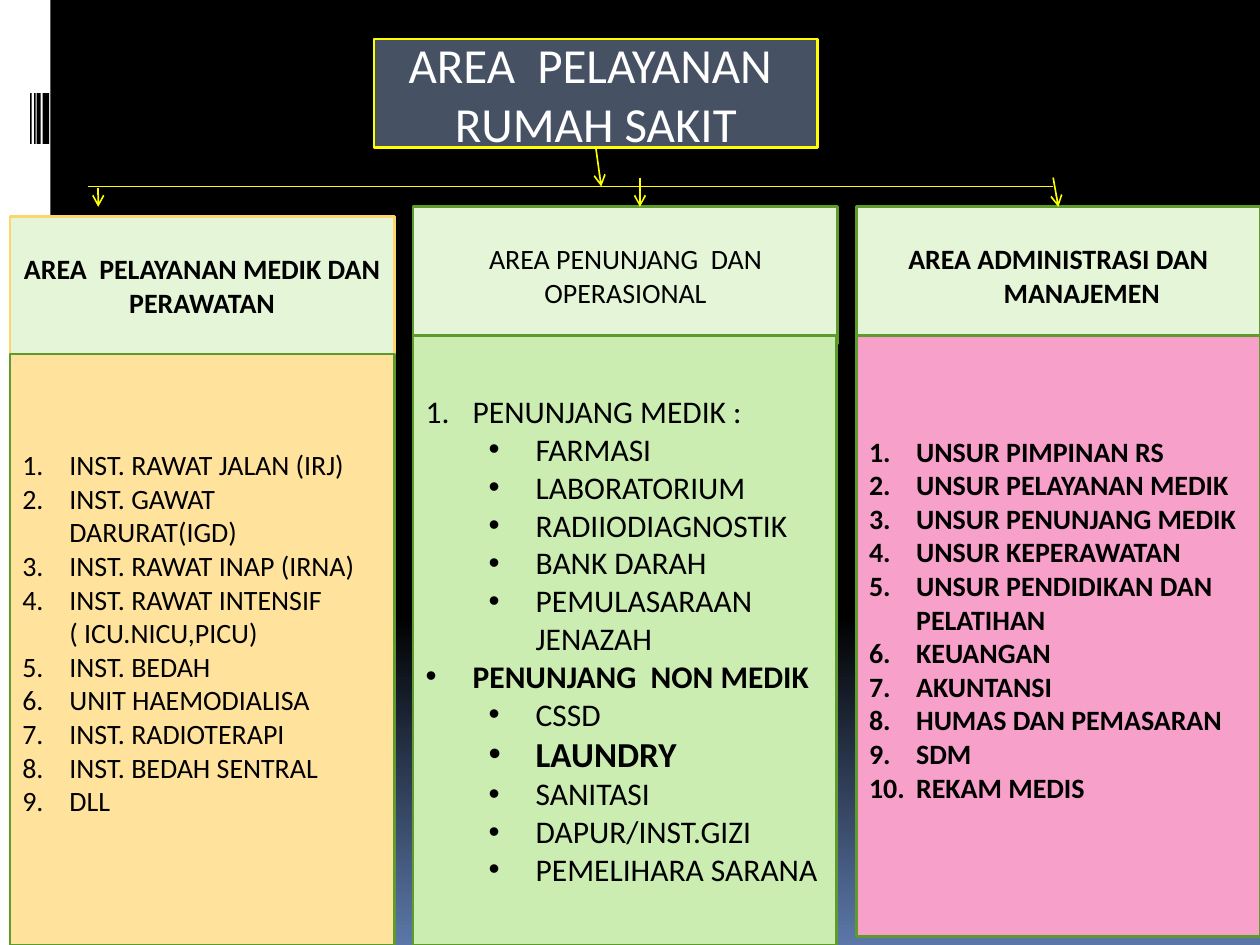
"""Build the chart of hospital service areas."""
import pptx
import pptx.dml.color
import pptx.enum.shapes
import pptx.enum.text
import pptx.oxml.ns
import pptx.util
from lxml import etree
from pptx.util import Cm

FONT = "Calibri"
BLACK, WHITE, YELLOW, GREEN = "000000", "FFFFFF", "FFFF00", "5E9B2C"
HEADER_FILL = "E5F6D8"
HEADER_HEIGHT = 2.77
INDENT = 0.95
LEVEL_STEP = 1.27
ALIGN = pptx.enum.text.PP_ALIGN

SIDEBAR = (0, 0, 1.02, 19.05)
BARCODE = [(0.86, 0.13), (0.74, 0.08), (0.69, 0.03), (0.61, 0.03)]
BARCODE_TOP, BARCODE_HEIGHT = 1.88, 1.02
TITLE = ["AREA  PELAYANAN ", "RUMAH SAKIT"]
TITLE_PLACE = (7.54, 0.79, 8.94, 2.18)

MEDICAL_ITEMS = [
    "INST. RAWAT JALAN (IRJ)", "INST. GAWAT DARURAT(IGD)", "INST. RAWAT INAP (IRNA)",
    "INST. RAWAT INTENSIF\n( ICU.NICU,PICU)", "INST. BEDAH", "UNIT HAEMODIALISA",
    "INST. RADIOTERAPI", "INST. BEDAH SENTRAL", "DLL",
]
SUPPORT_GROUPS = [
    ("PENUNJANG MEDIK :", True,
     ["FARMASI", "LABORATORIUM", "RADIIODIAGNOSTIK", "BANK DARAH", "PEMULASARAAN JENAZAH"]),
    ("PENUNJANG  NON MEDIK", False,
     ["CSSD", "LAUNDRY", "SANITASI", "DAPUR/INST.GIZI", "PEMELIHARA SARANA"]),
]
ADMIN_ITEMS = [
    "UNSUR PIMPINAN RS", "UNSUR PELAYANAN MEDIK", "UNSUR PENUNJANG MEDIK",
    "UNSUR KEPERAWATAN", "UNSUR PENDIDIKAN DAN PELATIHAN", "KEUANGAN", "AKUNTANSI",
    "HUMAS DAN PEMASARAN", "SDM", "REKAM MEDIS",
]
COLUMNS = {
    "medical": dict(
        title="AREA  PELAYANAN MEDIK DAN PERAWATAN", bold=True, hanging=False,
        left=0.2, top=4.37, width=7.75, line="FED46C",
        body=(7.14, 7.75, 11.91), fill="FFE39D", bottom_inset=0.81),
    "support": dict(
        title="AREA PENUNJANG  DAN OPERASIONAL", bold=False, hanging=False,
        left=8.33, top=4.17, width=8.56, line=GREEN,
        body=(6.76, 8.53, 12.29), fill="CCEDB1", bottom_inset=0.13),
    "admin": dict(
        title="AREA ADMINISTRASI DAN MANAJEMEN", bold=True, hanging=True,
        left=17.27, top=4.17, width=8.13, line=GREEN,
        body=(6.76, 8.13, 12.12), fill="F7A1CA", bottom_inset=0.81),
}
TITLE_ARROW = (12.01, 2.97, 12.12, 3.76)
BUS = (1.78, 3.76, 21.23, 3.76)
MEDICAL_ARROW = (1.98, 3.78, 1.98, 4.17)
ADMIN_ARROW = (21.23, 3.58, 21.34, 4.17)
SUPPORT_ARROW = (12.9, 3.58, 12.9, 4.17)


def rgb(value):
    return pptx.dml.color.RGBColor.from_string(value)


def add_xml(parent, tag, **attributes):
    return etree.SubElement(parent, pptx.oxml.ns.qn(tag), attributes)


def add_box(page, place, fill, line=None):
    box = page.shapes.add_shape(pptx.enum.shapes.MSO_SHAPE.RECTANGLE, *map(Cm, place))
    box.shadow.inherit = False
    box.fill.solid()
    box.fill.fore_color.rgb = rgb(fill)
    if line:
        box.line.color.rgb = rgb(line)
        box.line.width = pptx.util.Pt(1.5)
    else:
        box.line.fill.background()
    box.text_frame.word_wrap = True
    box.text_frame.vertical_anchor = pptx.enum.text.MSO_ANCHOR.MIDDLE
    return box


def format_paragraph(para, size, bold=False, color=BLACK, align=ALIGN.CENTER):
    para.alignment = align
    for span in para.runs:
        span.font.name = FONT
        span.font.size = pptx.util.Pt(size)
        span.font.bold = bold
        span.font.color.rgb = rgb(color)


def hang(para, level=0):
    para.level = level
    properties = para._p.get_or_add_pPr()
    properties.set("marL", str(Cm(INDENT + level * LEVEL_STEP)))
    properties.set("indent", str(-Cm(INDENT)))
    return properties


def fill_list(box, items):
    frame = box.text_frame
    frame.text = "\n".join("-" for _ in items)
    for para, (text, numbered, level, size, bold) in zip(frame.paragraphs, items):
        para.text = text
        format_paragraph(para, size, bold, align=ALIGN.LEFT)
        properties = hang(para, level)
        if numbered:
            add_xml(properties, "a:buFont", typeface="+mj-lt")
            add_xml(properties, "a:buAutoNum", type="arabicPeriod")
        else:
            add_xml(properties, "a:buFont", typeface="Arial")
            add_xml(properties, "a:buChar", char="•")


def add_line(page, points, arrow=True):
    line = page.shapes.add_connector(
        pptx.enum.shapes.MSO_CONNECTOR.STRAIGHT, *map(Cm, points))
    line.line.color.rgb = rgb(YELLOW)
    line.line.width = pptx.util.Pt(0.94)
    if arrow:
        add_xml(line.line._get_or_add_ln(), "a:tailEnd", type="arrow")
    add_xml(line._element.spPr, "a:effectLst")
    return line


def support_items():
    items = []
    for heading, numbered, children in SUPPORT_GROUPS:
        items.append((heading, numbered, 0, 18, not numbered))
        for child in children:
            strong = child == "LAUNDRY"
            items.append((child, False, 1, 20 if strong else 18, strong))
    return items


def set_background(page):
    fill = page.background.fill
    fill.gradient()
    fill.gradient_angle = 270
    for stop, (position, color) in zip(fill.gradient_stops, [(0.65, BLACK), (1, "5B77A8")]):
        stop.position = position
        stop.color.rgb = rgb(color)


def main():
    deck = pptx.Presentation()
    deck.slide_width, deck.slide_height = Cm(25.4), Cm(19.05)
    page = deck.slides.add_slide(deck.slide_layouts[6])
    set_background(page)

    add_box(page, SIDEBAR, WHITE)
    for left, width in BARCODE:
        add_box(page, (left, BARCODE_TOP, width, BARCODE_HEIGHT), BLACK)

    title = add_box(page, TITLE_PLACE, "465264", YELLOW)
    title.text_frame.text = "\n".join(TITLE)
    for para in title.text_frame.paragraphs:
        format_paragraph(para, 28, color=WHITE)

    lists = {
        "medical": [(text, True, 0, 16, False) for text in MEDICAL_ITEMS],
        "support": support_items(),
        "admin": [(text, True, 0, 16, True) for text in ADMIN_ITEMS],
    }
    headers = {}
    for name, column in COLUMNS.items():
        place = (column["left"], column["top"], column["width"], HEADER_HEIGHT)
        header = headers[name] = add_box(page, place, HEADER_FILL, column["line"])
        header.text_frame.text = column["title"]
        para = header.text_frame.paragraphs[0]
        format_paragraph(para, 16, column["bold"])
        if column["hanging"]:
            hang(para)
        body = add_box(page, (column["left"], *column["body"]), column["fill"], GREEN)
        body.text_frame.margin_bottom = Cm(column["bottom_inset"])
        fill_list(body, lists[name])

    add_line(page, TITLE_ARROW).begin_connect(title, 2)
    add_line(page, BUS, arrow=False)
    add_line(page, MEDICAL_ARROW)
    add_line(page, ADMIN_ARROW).end_connect(headers["admin"], 0)
    add_line(page, SUPPORT_ARROW)
    deck.save("out.pptx")


if __name__ == "__main__":
    main()
